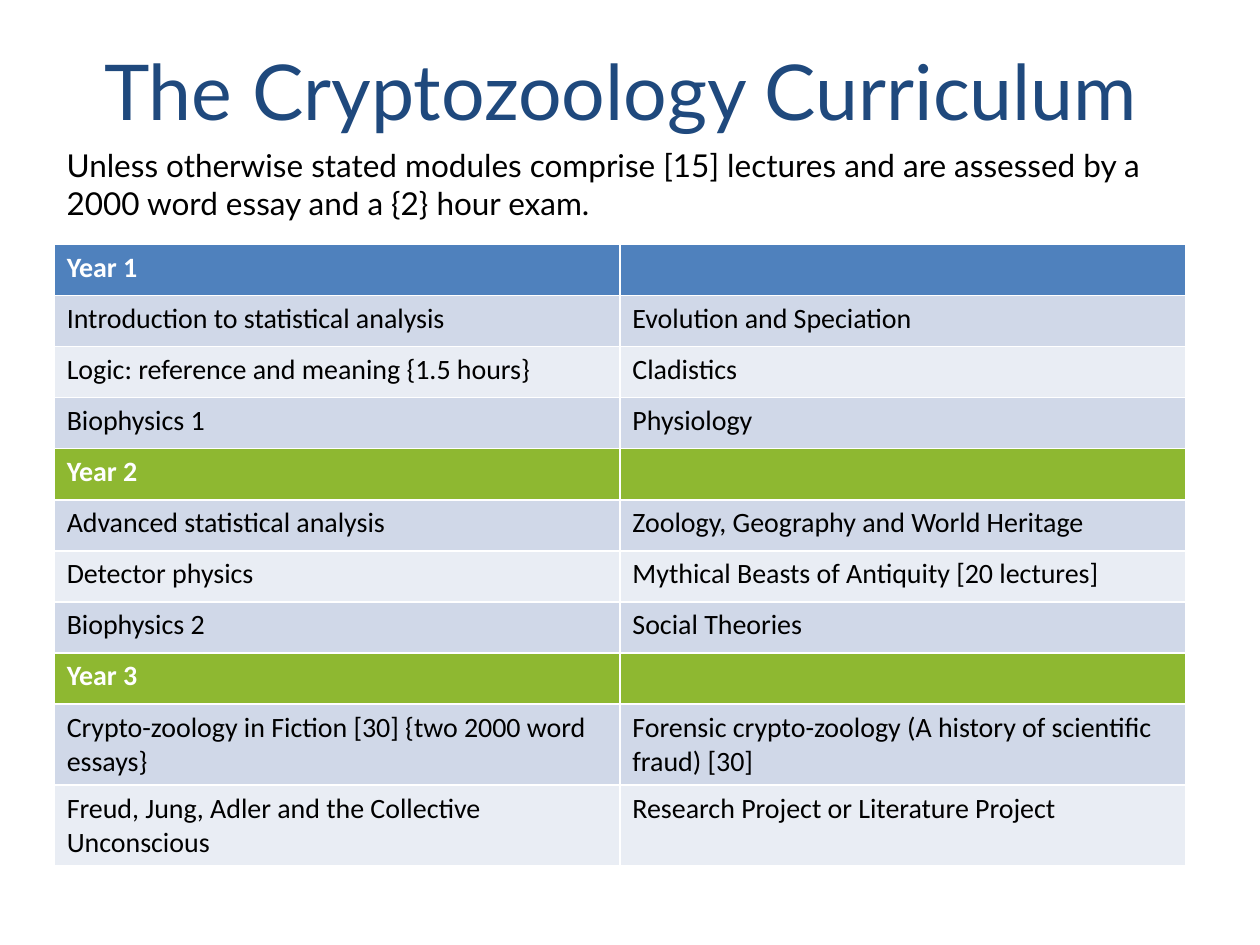
from pptx import Presentation
from pptx.dml.color import RGBColor
from pptx.enum import text
from pptx.util import Inches, Pt

NAVY = RGBColor(0x1F, 0x49, 0x7D)
BLUE = RGBColor(0x4F, 0x81, 0xBD)
GREEN = RGBColor(0x8E, 0xB8, 0x31)
BANDS = (RGBColor(0xD0, 0xD8, 0xE8), RGBColor(0xE9, 0xED, 0xF4))
WHITE = RGBColor(0xFF, 0xFF, 0xFF)
BLACK = RGBColor(0, 0, 0)

WIDTH, HEIGHT = Inches(10), Inches(7.5)
LEFT = Inches(0.43)
CONTENT_WIDTH = Inches(8.98)

CURRICULUM = {
    "Year 1": (BLUE, [
        ("Introduction to statistical analysis", "Evolution and Speciation"),
        ("Logic: reference and meaning {1.5 hours}", "Cladistics"),
        ("Biophysics 1", "Physiology"),
    ]),
    "Year 2": (GREEN, [
        ("Advanced statistical analysis", "Zoology, Geography and World Heritage"),
        ("Detector physics", "Mythical Beasts of Antiquity [20 lectures]"),
        ("Biophysics 2", "Social Theories"),
    ]),
    "Year 3": (GREEN, [
        ("Crypto-zoology in Fiction [30] {two 2000 word essays}",
         "Forensic crypto-zoology (A history of scientific fraud) [30]"),
        ("Freud, Jung, Adler and the Collective Unconscious",
         "Research Project or Literature Project"),
    ]),
}


def write(frame, words, font, size, color, bold=False):
    frame.text = words
    for run in frame.paragraphs[0].runs:
        run.font.name = font
        run.font.size = Pt(size)
        run.font.color.rgb = color
        run.font.bold = bold


def place_title(slide, box):
    title = slide.shapes.title
    title.left, title.top, title.width, title.height = box
    frame = title.text_frame
    write(frame, "The Cryptozoology Curriculum", "Lato", 44, NAVY)
    frame.vertical_anchor = text.MSO_ANCHOR.MIDDLE
    frame.paragraphs[0].alignment = text.PP_ALIGN.CENTER


def place_assessment_note(slide, box):
    frame = slide.shapes.add_textbox(*box).text_frame
    frame.word_wrap = True
    frame.auto_size = text.MSO_AUTO_SIZE.SHAPE_TO_FIT_TEXT
    write(frame, "Unless otherwise stated modules comprise [15] lectures and are "
                 "assessed by a 2000 word essay and a {2} hour exam.", "Lato", 18, BLACK)


def curriculum_rows():
    """Yield the words, fill, font colour and weight of each table row."""
    for year, (year_fill, modules) in CURRICULUM.items():
        yield (year, ""), year_fill, WHITE, True
        for index, pair in enumerate(modules):
            yield pair, BANDS[index % 2], BLACK, False


def place_curriculum(slide, box):
    rows = list(curriculum_rows())
    table = slide.shapes.add_table(len(rows), 2, *box).table
    for row, (words, fill, color, bold) in zip(table.rows, rows):
        for cell, module in zip(row.cells, words):
            cell.fill.solid()
            cell.fill.fore_color.rgb = fill
            write(cell.text_frame, module, "Calibri", 16, color, bold)


def main():
    deck = Presentation()
    deck.slide_width, deck.slide_height = WIDTH, HEIGHT
    slide = deck.slides.add_slide(deck.slide_layouts[5])
    place_title(slide, (LEFT, Inches(0.29), Inches(9), Inches(0.84)))
    place_curriculum(slide, (LEFT, Inches(1.94), CONTENT_WIDTH, Inches(4.46)))
    place_assessment_note(slide, (LEFT, Inches(1.11), CONTENT_WIDTH, Inches(0.71)))
    deck.save("out.pptx")


if __name__ == "__main__":
    main()
